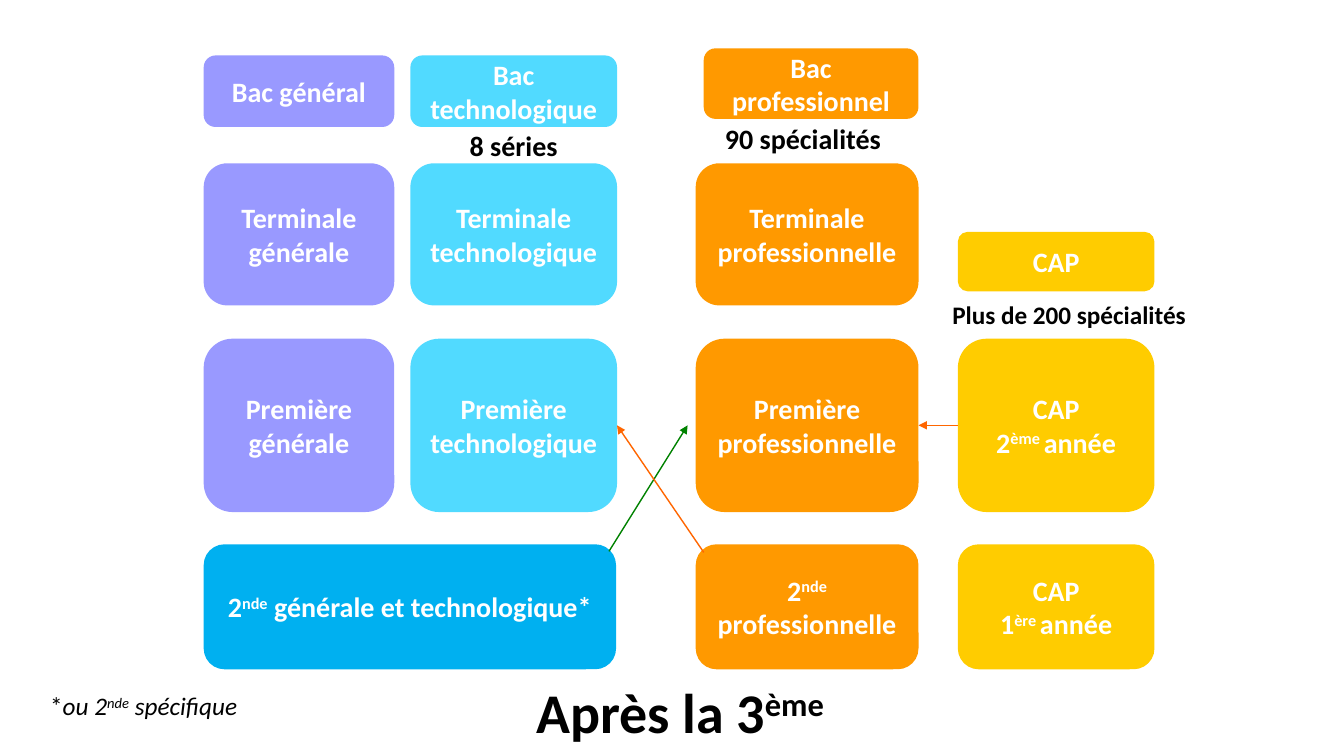
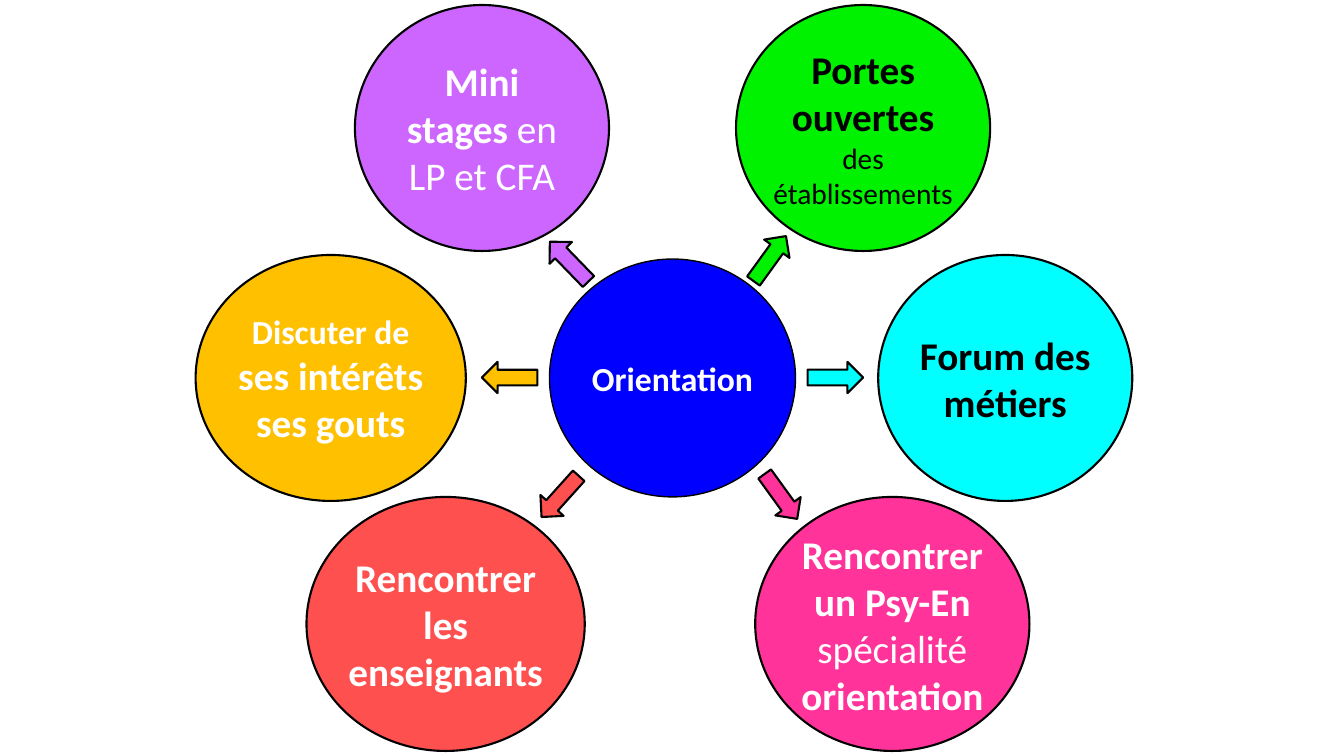
from lxml import etree
from pptx import Presentation
from pptx import util as u
from pptx.dml.color import RGBColor
from pptx.enum import shapes, text
from pptx.oxml import ns

FONT = "Calibri"
WHITE = RGBColor(0xFF, 0xFF, 0xFF)
BLACK = RGBColor(0x00, 0x00, 0x00)
LAVENDER = RGBColor(0x99, 0x99, 0xFF)
SKY = RGBColor(0x51, 0xDA, 0xFF)
AZURE = RGBColor(0x00, 0xB0, 0xF0)
ORANGE = RGBColor(0xFF, 0x99, 0x00)
YELLOW = RGBColor(0xFF, 0xCC, 0x00)
DARK_ORANGE = RGBColor(0xFF, 0x66, 0x00)
DARK_GREEN = RGBColor(0x00, 0x82, 0x00)
BLUE = RGBColor(0x00, 0x00, 0xFF)
CYAN = RGBColor(0x00, 0xFF, 0xFF)
AMBER = RGBColor(0xFF, 0xC0, 0x00)
PINK = RGBColor(0xFF, 0x33, 0x99)
CORAL = RGBColor(0xFF, 0x50, 0x50)
GREEN = RGBColor(0x00, 0xF2, 0x00)
PURPLE = RGBColor(0xCC, 0x66, 0xFF)

SUPERSCRIPT, REGULAR, ITALIC = "superscript", "regular", "italic"

COLUMNS = {
    "general": (2.02, 1.89, LAVENDER),
    "technological": (4.07, 2.05, SKY),
    "common": (2.02, 4.09, AZURE),
    "professional": (6.9, 2.21, ORANGE),
    "professional diploma": (6.98, 2.13, ORANGE),
    "cap": (9.5, 1.95, YELLOW),
}
ROWS = {
    "diploma": (0.55, 0.71),
    "professional diploma": (0.48, 0.7),
    "terminale": (1.62, 1.41),
    "cap diploma": (2.3, 0.59),
    "première": (3.36, 1.72),
    "seconde": (5.4, 1.24),
}
STAGES = [
    ("general", "diploma", ["Bac général"]),
    ("technological", "diploma", ["Bac technologique"]),
    ("professional diploma", "professional diploma", ["Bac professionnel"]),
    ("general", "terminale", ["Terminale générale"]),
    ("technological", "terminale", ["Terminale technologique"]),
    ("professional", "terminale", ["Terminale", "professionnelle"]),
    ("cap", "cap diploma", ["CAP"]),
    ("general", "première", ["Première générale"]),
    ("technological", "première", ["Première technologique"]),
    ("professional", "première", ["Première professionnelle"]),
    ("cap", "première", ["CAP", [("2", None), ("ème ", SUPERSCRIPT), ("année", None)]]),
    ("common", "seconde",
     [[("2", None), ("nde", SUPERSCRIPT), (" générale et technologique*", None)]]),
    ("professional", "seconde",
     [[("2", None), ("nde", SUPERSCRIPT), (" professionnelle", None)]]),
    ("cap", "seconde", ["CAP", [("1", None), ("ère ", SUPERSCRIPT), ("année", None)]]),
]
PATHWAYS = [
    ((9.5, 4.22), (9.11, 4.22), DARK_ORANGE),
    ((6.04, 5.47), (6.82, 4.22), DARK_GREEN),
    ((6.98, 5.48), (6.12, 4.22), DARK_ORANGE),
]
TITLE = [("Après la 3", None), ("ème", SUPERSCRIPT)]
FOOTNOTE = [("*", None), ("ou 2", ITALIC), ("nde", "italic superscript"),
            (" spécifique", ITALIC)]
LABELS = [
    ((4.07, 1.23, 2.05, 0.44), "8 séries", 20, True),
    ((6.9, 1.16, 2.13, 0.44), "90 spécialités", 20, True),
    ((9.11, 2.92, 2.99, 0.4), "Plus de 200 spécialités", 18, True),
    ((-0.1, 6.8, 3.05, 0.4), FOOTNOTE, 18, False),
]

HUB = ((5.45, 2.57, 2.44, 2.36), BLUE, WHITE, [("Orientation", 24)])
BUBBLES = [
    ((8.71, 2.53, 2.52, 2.44), CYAN, BLACK, [("Forum des métiers", 28)]),
    ((1.94, 2.53, 2.68, 2.44), AMBER, WHITE,
     [("Discuter de", 24), ("ses intérêts", 28), ("ses gouts", 28)]),
    ((7.49, 4.93, 2.72, 2.52), PINK, WHITE,
     [("Rencontrer", 28),
      ([("un Psy-En ", None), ("spécialité ", REGULAR), ("orientation", None)], 28)]),
    ((3.04, 4.93, 2.76, 2.52), CORAL, WHITE, [("Rencontrer les enseignants", 28)]),
    ((7.3, 0.05, 2.52, 2.44), GREEN, BLACK,
     [("Portes ouvertes", 28), ([("des établissements", REGULAR)], 21)]),
    ((3.52, 0.05, 2.52, 2.44), PURPLE, WHITE,
     [([("Mini stages ", None), ("en LP et CFA", REGULAR)], 28)]),
]
ARROW_SIZE = (0.55, 0.31)
ARROWS = [
    (8.01, 3.59, 0, CYAN),
    (4.78, 3.59, 180, AMBER),
    (7.47, 4.77, 54.1, PINK),
    (5.28, 4.77, 132, CORAL),
    (7.36, 2.41, 305.9, GREEN),
    (5.37, 2.44, 225.9, PURPLE),
]


def inches(values):
    return [u.Inches(value) for value in values]


def write(shape, paragraphs, color, bold=True, margins=None):
    frame = shape.text_frame
    frame.word_wrap = True
    frame.auto_size = text.MSO_AUTO_SIZE.NONE
    if margins is not None:
        frame.margin_left = frame.margin_right = margins
        frame.margin_top = frame.margin_bottom = margins
    for index, (content, size) in enumerate(paragraphs):
        paragraph = frame.add_paragraph() if index else frame.paragraphs[0]
        paragraph.alignment = text.PP_ALIGN.CENTER
        font = paragraph.font
        font.name, font.size, font.bold = FONT, u.Pt(size), bold
        font.color.rgb = color
        runs = [(content, None)] if isinstance(content, str) else content
        for words, style in runs:
            run = paragraph.add_run()
            run.text = words
            if style == REGULAR:
                run.font.bold = False
            if style and ITALIC in style:
                run.font.italic = True
            if style and SUPERSCRIPT in style:
                run._r.get_or_add_rPr().set("baseline", "30000")


def add_figure(slide, kind, box, fill, line_width=None):
    shape = slide.shapes.add_shape(kind, *inches(box))
    shape.shadow.inherit = False
    shape.fill.solid()
    shape.fill.fore_color.rgb = fill
    if line_width:
        shape.line.color.rgb = BLACK
        shape.line.width = u.Pt(line_width)
    else:
        shape.line.fill.background()
    shape.text_frame.vertical_anchor = text.MSO_ANCHOR.MIDDLE
    return shape


def add_pathway(slide, start, end, color):
    connector = slide.shapes.add_connector(
        shapes.MSO_CONNECTOR.STRAIGHT, *inches(start + end))
    connector.line.color.rgb = color
    connector.line.width = u.Pt(1)
    tail = etree.SubElement(connector.line._get_or_add_ln(), ns.qn("a:tailEnd"))
    tail.set("type", "triangle")
    etree.SubElement(connector._element.spPr, ns.qn("a:effectLst"))


def add_bubble(slide, box, fill, color, paragraphs, line_width):
    bubble = add_figure(slide, shapes.MSO_SHAPE.OVAL, box, fill, line_width)
    write(bubble, paragraphs, color, margins=0)


def build_pathways(presentation):
    slide = presentation.slides.add_slide(presentation.slide_layouts[5])
    title = slide.shapes.title
    title.left, title.top, title.width, title.height = inches((2.02, 6.82, 9.45, 0.47))
    title.text_frame.vertical_anchor = text.MSO_ANCHOR.MIDDLE
    write(title, [(TITLE, 40)], BLACK)
    for column, row, paragraphs in STAGES:
        left, width, color = COLUMNS[column]
        top, height = ROWS[row]
        stage = add_figure(slide, shapes.MSO_SHAPE.ROUNDED_RECTANGLE,
                           (left, top, width, height), color)
        write(stage, [(content, 20) for content in paragraphs], WHITE)
    for box, content, size, bold in LABELS:
        label = slide.shapes.add_textbox(*inches(box))
        write(label, [(content, size)], BLACK, bold)
    for start, end, color in PATHWAYS:
        add_pathway(slide, start, end, color)


def build_orientation(presentation):
    slide = presentation.slides.add_slide(presentation.slide_layouts[6])
    add_bubble(slide, *HUB, line_width=1)
    for bubble in BUBBLES:
        add_bubble(slide, *bubble, line_width=1.5)
    for left, top, rotation, color in ARROWS:
        arrow = add_figure(slide, shapes.MSO_SHAPE.RIGHT_ARROW,
                           (left, top, *ARROW_SIZE), color, 1.5)
        arrow.rotation = rotation


def main():
    presentation = Presentation()
    presentation.slide_width = u.Inches(13.33)
    presentation.slide_height = u.Inches(7.5)
    build_pathways(presentation)
    build_orientation(presentation)
    presentation.save("out.pptx")


if __name__ == "__main__":
    main()
